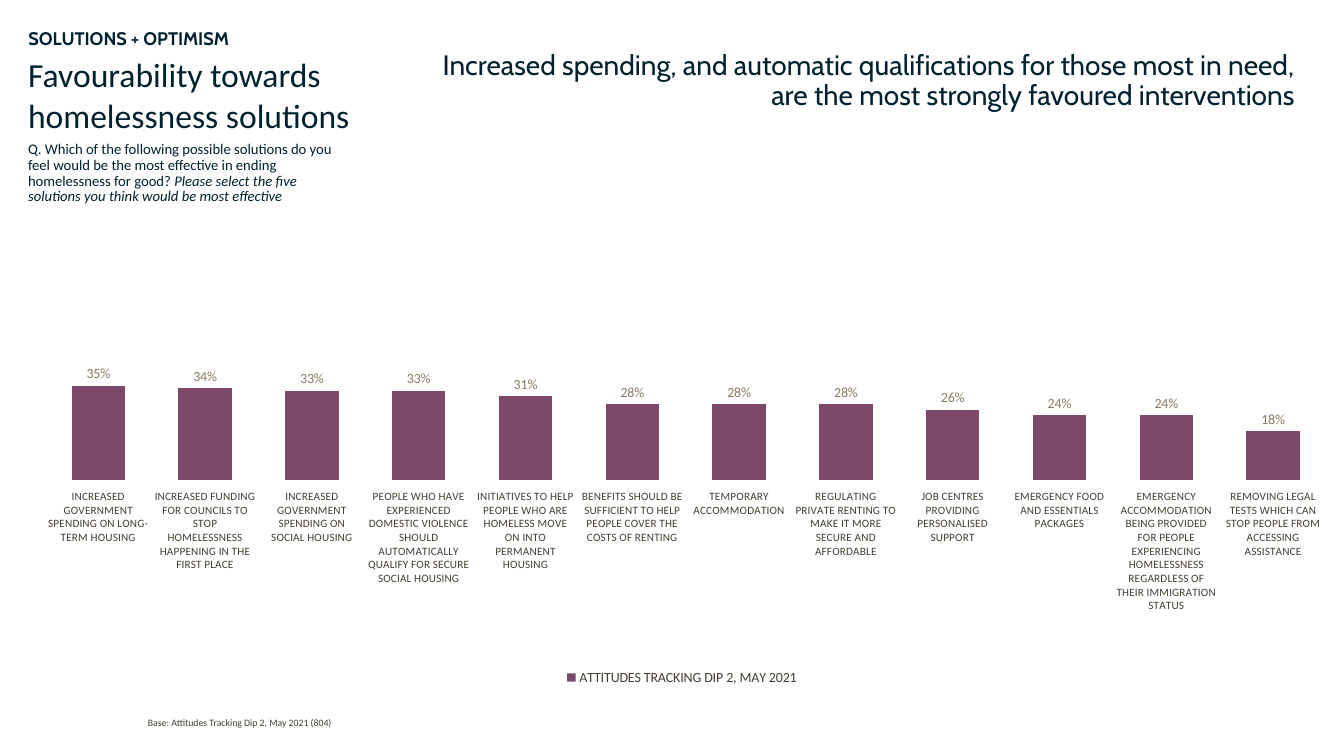
from dataclasses import dataclass

from lxml import etree
from pptx import Presentation
from pptx.chart.chart import Chart
from pptx.chart.data import CategoryChartData
from pptx.dml.color import RGBColor
from pptx.enum.chart import XL_CHART_TYPE as ChartType
from pptx.enum.chart import XL_LABEL_POSITION as LabelPosition
from pptx.enum.chart import XL_LEGEND_POSITION as LegendPosition
from pptx.enum.chart import XL_TICK_LABEL_POSITION as TickLabels
from pptx.enum.chart import XL_TICK_MARK as TickMark
from pptx.enum.text import MSO_ANCHOR as Anchor
from pptx.enum.text import MSO_AUTO_SIZE as AutoSize
from pptx.enum.text import PP_ALIGN as Align
from pptx.oxml.ns import qn
from pptx.slide import Slide
from pptx.text.text import Font
from pptx.util import Pt

NAVY, BROWN, TAUPE, PLUM = "00212E", "443E32", "877B64", "7D496B"
CABIN, CALIBRI = "Cabin", "Calibri"
TITLE_ONLY = 5


@dataclass(frozen=True)
class Box:
    left: float
    top: float
    width: float
    height: float

    def lengths(self) -> tuple[Pt, Pt, Pt, Pt]:
        return Pt(self.left), Pt(self.top), Pt(self.width), Pt(self.height)


@dataclass(frozen=True)
class Solution:
    label: str
    share: float


SOLUTIONS = [
    Solution("INCREASED GOVERNMENT SPENDING ON LONG-TERM HOUSING", 0.35),
    Solution("INCREASED FUNDING FOR COUNCILS TO STOP HOMELESSNESS HAPPENING IN THE FIRST PLACE", 0.34),
    Solution("INCREASED GOVERNMENT SPENDING ON SOCIAL HOUSING", 0.33),
    Solution("PEOPLE WHO HAVE EXPERIENCED DOMESTIC VIOLENCE SHOULD AUTOMATICALLY "
             "QUALIFY FOR SECURE SOCIAL HOUSING", 0.33),
    Solution("INITIATIVES TO HELP PEOPLE WHO ARE HOMELESS MOVE ON INTO PERMANENT HOUSING", 0.31),
    Solution("BENEFITS SHOULD BE SUFFICIENT TO HELP PEOPLE COVER THE COSTS OF RENTING", 0.28),
    Solution("TEMPORARY ACCOMMODATION", 0.28),
    Solution("REGULATING PRIVATE RENTING TO MAKE IT MORE SECURE AND AFFORDABLE", 0.28),
    Solution("JOB CENTRES PROVIDING PERSONALISED SUPPORT", 0.26),
    Solution("EMERGENCY FOOD AND ESSENTIALS PACKAGES", 0.24),
    Solution("EMERGENCY ACCOMMODATION BEING PROVIDED FOR PEOPLE EXPERIENCING HOMELESSNESS "
             "REGARDLESS OF THEIR IMMIGRATION STATUS", 0.24),
    Solution("REMOVING LEGAL TESTS WHICH CAN STOP PEOPLE FROM ACCESSING ASSISTANCE", 0.18),
]


def color(value: str) -> RGBColor:
    return RGBColor.from_string(value)


def format_font(font: Font, size: float, hue: str, name: str = CALIBRI,
                bold: bool = False, italic: bool = False) -> None:
    font.size, font.name, font.bold, font.italic = Pt(size), name, bold, italic
    font.color.rgb = color(hue)


def add_text(slide: Slide, box: Box, text: str, *, size: float, hue: str = NAVY,
             name: str = CALIBRI, bold: bool = False, italic_ending: str = "",
             spacing: float = 0.9, align: Align = Align.LEFT,
             anchor: Anchor = Anchor.TOP, is_title: bool = False) -> None:
    shape = slide.shapes.title if is_title else slide.shapes.add_textbox(*box.lengths())
    shape.left, shape.top, shape.width, shape.height = box.lengths()
    frame = shape.text_frame
    frame.word_wrap, frame.auto_size = True, AutoSize.NONE
    frame.vertical_anchor = anchor
    paragraph = frame.paragraphs[0]
    paragraph.alignment, paragraph.line_spacing = align, spacing
    for words, italic in ((text, False), (italic_ending, True)):
        if words:
            run = paragraph.add_run()
            run.text = words
            format_font(run.font, size, hue, name, bold, italic)


def set_plot_area(chart: Chart, x: float, y: float, width: float, height: float) -> None:
    plot_area = chart.plots[0]._element.getparent()
    for old_layout in plot_area.findall(qn("c:layout")):
        plot_area.remove(old_layout)
    layout = etree.Element(qn("c:layout"))
    manual = etree.SubElement(layout, qn("c:manualLayout"))
    settings = {"layoutTarget": "inner", "xMode": "edge", "yMode": "edge",
                "x": x, "y": y, "w": width, "h": height}
    for tag, value in settings.items():
        etree.SubElement(manual, qn(f"c:{tag}")).set("val", str(value))
    plot_area.insert(0, layout)


def add_solutions_chart(slide: Slide, box: Box) -> None:
    data = CategoryChartData(number_format="0%")
    data.categories = [solution.label for solution in SOLUTIONS]
    data.add_series("ATTITUDES TRACKING DIP 2, MAY 2021",
                    [solution.share for solution in SOLUTIONS])
    chart = slide.shapes.add_chart(ChartType.COLUMN_CLUSTERED, *box.lengths(), data).chart
    format_font(chart.font, 10, NAVY, CABIN)
    chart.has_title = False

    # Columns and their labels
    plot = chart.plots[0]
    plot.gap_width, plot.overlap, plot.vary_by_categories = 100, -5, False
    fill = plot.series[0].format.fill
    fill.solid()
    fill.fore_color.rgb = color(PLUM)
    plot.has_data_labels = True
    labels = plot.data_labels
    labels.show_value, labels.position = True, LabelPosition.OUTSIDE_END
    labels.number_format, labels.number_format_is_linked = "0%", False
    format_font(labels.font, 10, TAUPE)

    # Axes
    category_axis, value_axis = chart.category_axis, chart.value_axis
    category_axis.major_tick_mark = TickMark.NONE
    category_axis.tick_label_position = TickLabels.LOW
    category_axis.format.line.fill.background()
    format_font(category_axis.tick_labels.font, 8, BROWN)
    value_axis.minimum_scale, value_axis.maximum_scale, value_axis.major_unit = 0, 1, 1
    value_axis.has_major_gridlines = False
    value_axis.visible = False

    # Legend
    chart.has_legend = True
    chart.legend.position = LegendPosition.BOTTOM
    chart.legend.include_in_layout = False
    format_font(chart.legend.font, 10, BROWN)
    set_plot_area(chart, 0.006, 0, 0.994, 0.564)


def main() -> None:
    presentation = Presentation()
    presentation.slide_width, presentation.slide_height = Pt(960), Pt(540)
    slide = presentation.slides.add_slide(presentation.slide_layouts[TITLE_ONLY])

    # Section title, heading and question
    add_text(slide, Box(13, 18, 238, 30), "SOLUTIONS + OPTIMISM",
             size=13, name=CABIN, bold=True, is_title=True)
    add_text(slide, Box(13, 35.3, 279, 68), "Favourability towards homelessness solutions",
             size=24, spacing=1.0)
    add_text(slide, Box(13, 112.3, 238, 23),
             "Q. Which of the following possible solutions do you feel would be "
             "the most effective in ending homelessness for good? ",
             italic_ending="Please select the five solutions you think would be most effective",
             size=10.5, anchor=Anchor.MIDDLE)

    # Key finding
    add_text(slide, Box(309, 33, 623, 30),
             "Increased spending, and automatic qualifications for those most in need, "
             "are the most strongly favoured interventions",
             size=20, name=CABIN, align=Align.RIGHT)

    # Chart and its base note
    add_solutions_chart(slide, Box(26.6, 149.8, 921, 342.7))
    add_text(slide, Box(98.6, 505.4, 430, 23), "Base: Attitudes Tracking Dip 2, May 2021 (804)",
             size=7, hue=BROWN, anchor=Anchor.MIDDLE)

    presentation.save("out.pptx")


if __name__ == "__main__":
    main()
